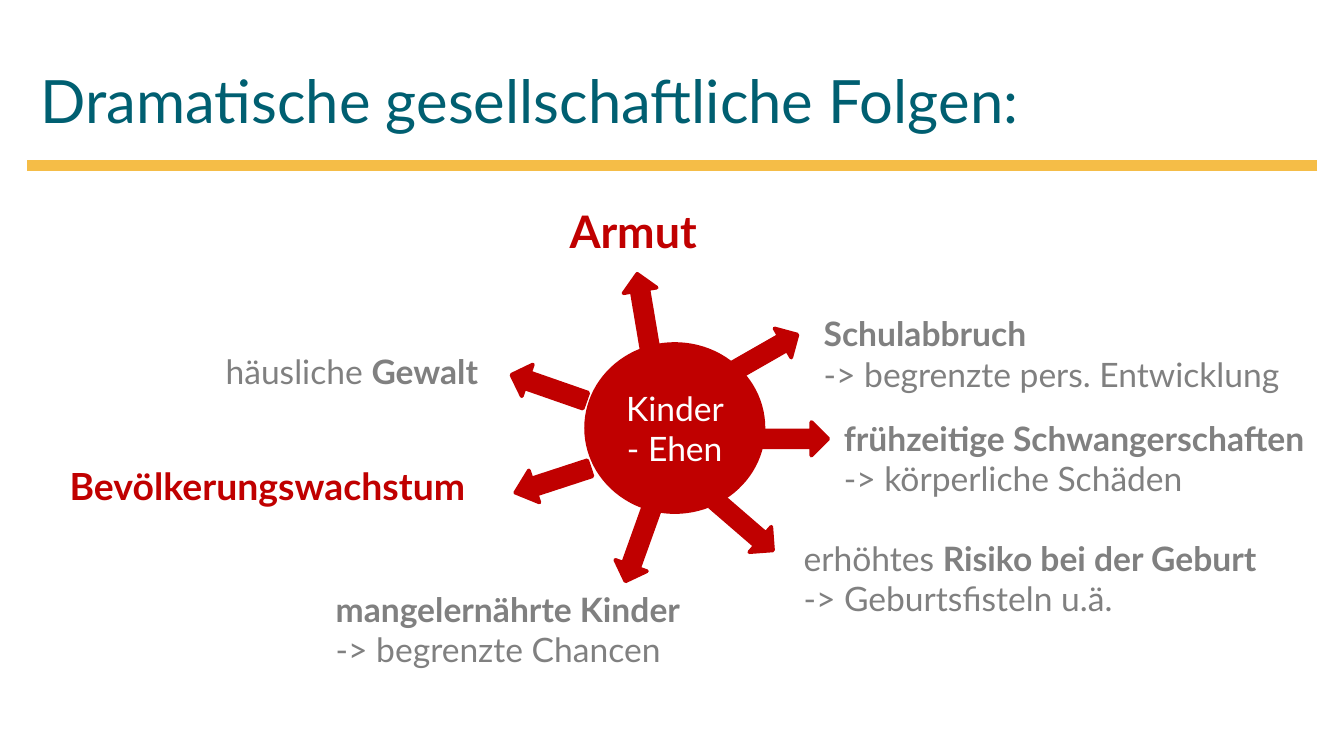
from lxml import etree
from pptx import Presentation
from pptx.dml.color import RGBColor
from pptx.enum.shapes import MSO_CONNECTOR, MSO_SHAPE
from pptx.enum.text import MSO_ANCHOR, MSO_AUTO_SIZE, PP_ALIGN
from pptx.oxml.ns import qn
from pptx.util import Pt

RED, GREY, TEAL, YELLOW, WHITE = "C00000", "808080", "005F71", "F5BD47", "FFFFFF"

# Arrow centre measured from the hub centre, rotation, length, head ratio
ARROWS = [
    (61.2, 5.8, 0, 42, 0.5),
    (47.5, -39.6, 330.2, 42, 0.5),
    (37.1, 52.2, 40.8, 41, 0.5),
    (-18.7, 60.5, 109.7, 46, 0.5),
    (-16.6, -61.9, 260.4, 42, 0.5),
    (-67.7, -21.6, 199.2, 42, 0.5),
    (-65.5, 28.1, 161.9, 42, 0.59),
]
ARROW_THICKNESS = 18

# Box, size, colour, lines of (text, bold) runs
CONSEQUENCES = [
    ((298, 105.8, 85.7, 36), 24, RED, [[("Armut", True)]]),
    ((434.2, 164.2, 264.2, 51), 18, GREY,
     [[("Schulabbruch", True)], [("-> begrenzte pers. Entwicklung", False)]]),
    ((445, 220.3, 283, 51), 18, GREY,
     [[("frühzeitige Schwangerschaften", True)], [("-> körperliche Schäden", False)]]),
    ((423.4, 284.4, 274.3, 72.7), 18, GREY,
     [[("erhöhtes ", False), ("Risiko bei der Geburt", True)],
      [("-> Geburtsfisteln u.ä.", False)]]),
    ((172.8, 311.8, 213.1, 51), 18, GREY,
     [[("mangelernährte Kinder", True)], [("-> begrenzte Chancen", False)]]),
    ((30.2, 244.8, 247, 31.7), 20, RED, [[("Bevölkerungswachstum", True)]]),
    ((113.8, 184.3, 156.2, 28.8), 18, GREY, [[("häusliche ", False), ("Gewalt", True)]]),
]


def rgb(colour):
    return RGBColor.from_string(colour)


def set_attributes(target, values):
    for key, value in values.items():
        setattr(target, key, value)


def style_font(font, size, colour, bold=False):
    set_attributes(font, {"name": "Lato", "size": Pt(size), "bold": bold})
    font.color.rgb = rgb(colour)


def add_heading(slide, box, text):
    """Place the title in the box and the rule below it."""
    left, top, width, height = box
    title = slide.shapes.title
    set_attributes(title, dict(zip(("left", "top", "width", "height"), map(Pt, box))))
    title.text_frame.text = text
    set_attributes(title.text_frame, {
        "vertical_anchor": MSO_ANCHOR.BOTTOM, "word_wrap": True,
        "auto_size": MSO_AUTO_SIZE.NONE})
    heading = title.text_frame.paragraphs[0]
    heading.alignment = PP_ALIGN.LEFT
    style_font(heading.runs[0].font, 32, TEAL)

    rule_y = top + height + 12.3
    rule = slide.shapes.add_connector(
        MSO_CONNECTOR.STRAIGHT, Pt(left + width), Pt(rule_y), Pt(left), Pt(rule_y))
    rule.line.color.rgb = rgb(YELLOW)
    rule.line.width = Pt(6)
    etree.SubElement(rule._element.spPr, qn("a:effectLst"))


def add_red_shape(slide, preset, box):
    shape = slide.shapes.add_shape(preset, *map(Pt, box))
    shape.shadow.inherit = False
    shape.fill.solid()
    shape.fill.fore_color.rgb = rgb(RED)
    shape.line.color.rgb = rgb(RED)
    shape.line.width = Pt(2)
    return shape


def add_hub(slide, box, text):
    """Draw the central circle and the arrows pointing away from it."""
    left, top, width, height = box
    hub = add_red_shape(slide, MSO_SHAPE.FLOWCHART_CONNECTOR, box)
    hub.text_frame.text = text
    set_attributes(hub.text_frame, {"word_wrap": True, "vertical_anchor": MSO_ANCHOR.MIDDLE})
    label = hub.text_frame.paragraphs[0]
    label.alignment = PP_ALIGN.CENTER
    style_font(label.runs[0].font, 18, WHITE)

    centre_x, centre_y = left + width / 2, top + height / 2
    for dx, dy, rotation, length, head in ARROWS:
        arrow = add_red_shape(slide, MSO_SHAPE.RIGHT_ARROW, (
            centre_x + dx - length / 2, centre_y + dy - ARROW_THICKNESS / 2,
            length, ARROW_THICKNESS))
        arrow.rotation = rotation
        arrow.adjustments[1] = head


def add_consequence(slide, box, size, colour, lines):
    frame = slide.shapes.add_textbox(*map(Pt, box)).text_frame
    set_attributes(frame, {"word_wrap": False, "auto_size": MSO_AUTO_SIZE.SHAPE_TO_FIT_TEXT})
    for index, line in enumerate(lines):
        paragraph = frame.add_paragraph() if index else frame.paragraphs[0]
        for text, bold in line:
            run = paragraph.add_run()
            run.text = text
            style_font(run.font, size, colour, bold)


def main():
    presentation = Presentation()
    set_attributes(presentation, {"slide_width": Pt(720), "slide_height": Pt(405)})
    slide = presentation.slides.add_slide(presentation.slide_layouts.get_by_name("Title Only"))
    add_heading(slide, (14.4, 8.6, 691.2, 67.7), "Dramatische gesellschaftliche Folgen:")
    add_hub(slide, (314, 184.3, 95, 90), "Kinder- Ehen")
    for consequence in CONSEQUENCES:
        add_consequence(slide, *consequence)
    presentation.save("out.pptx")


if __name__ == "__main__":
    main()
